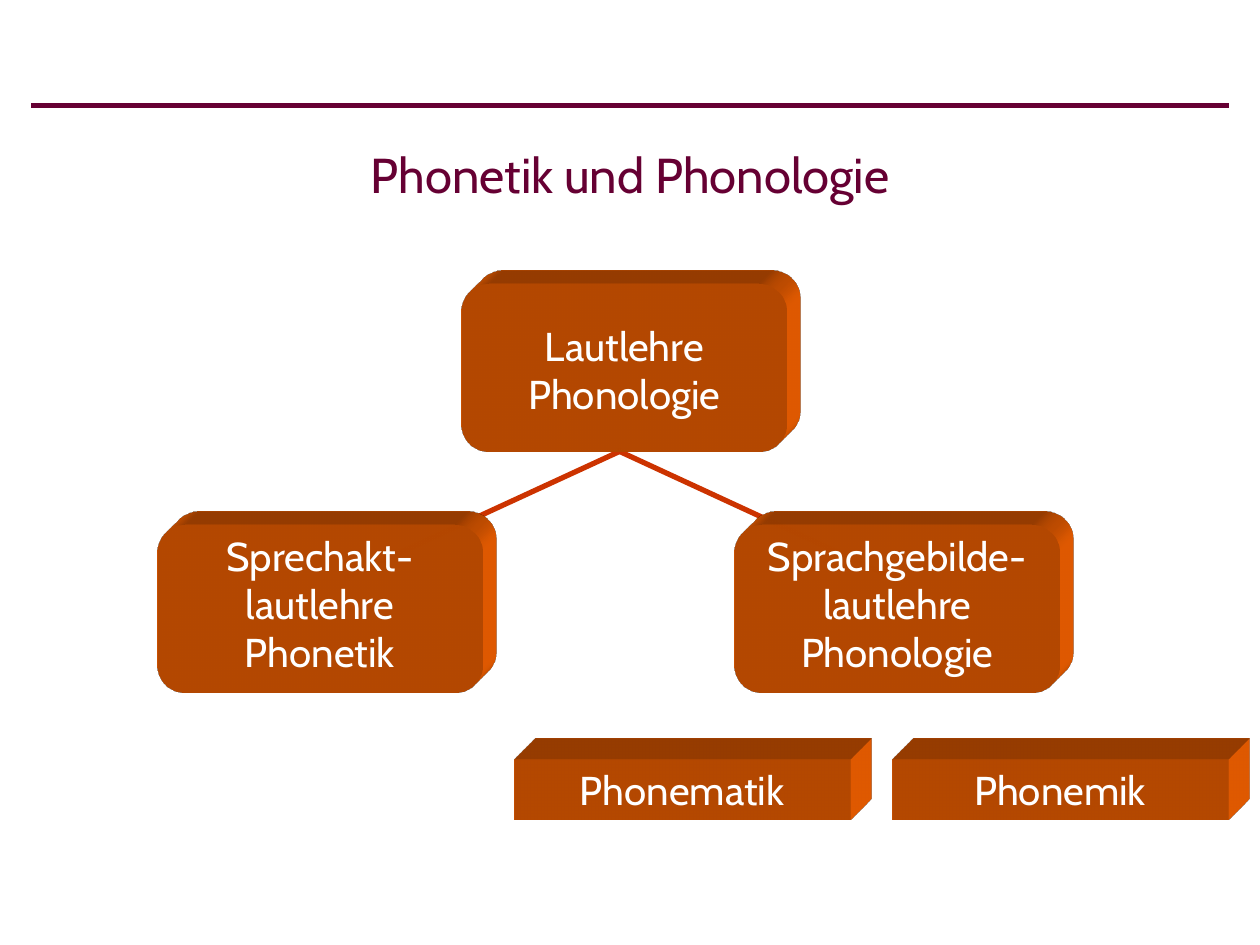
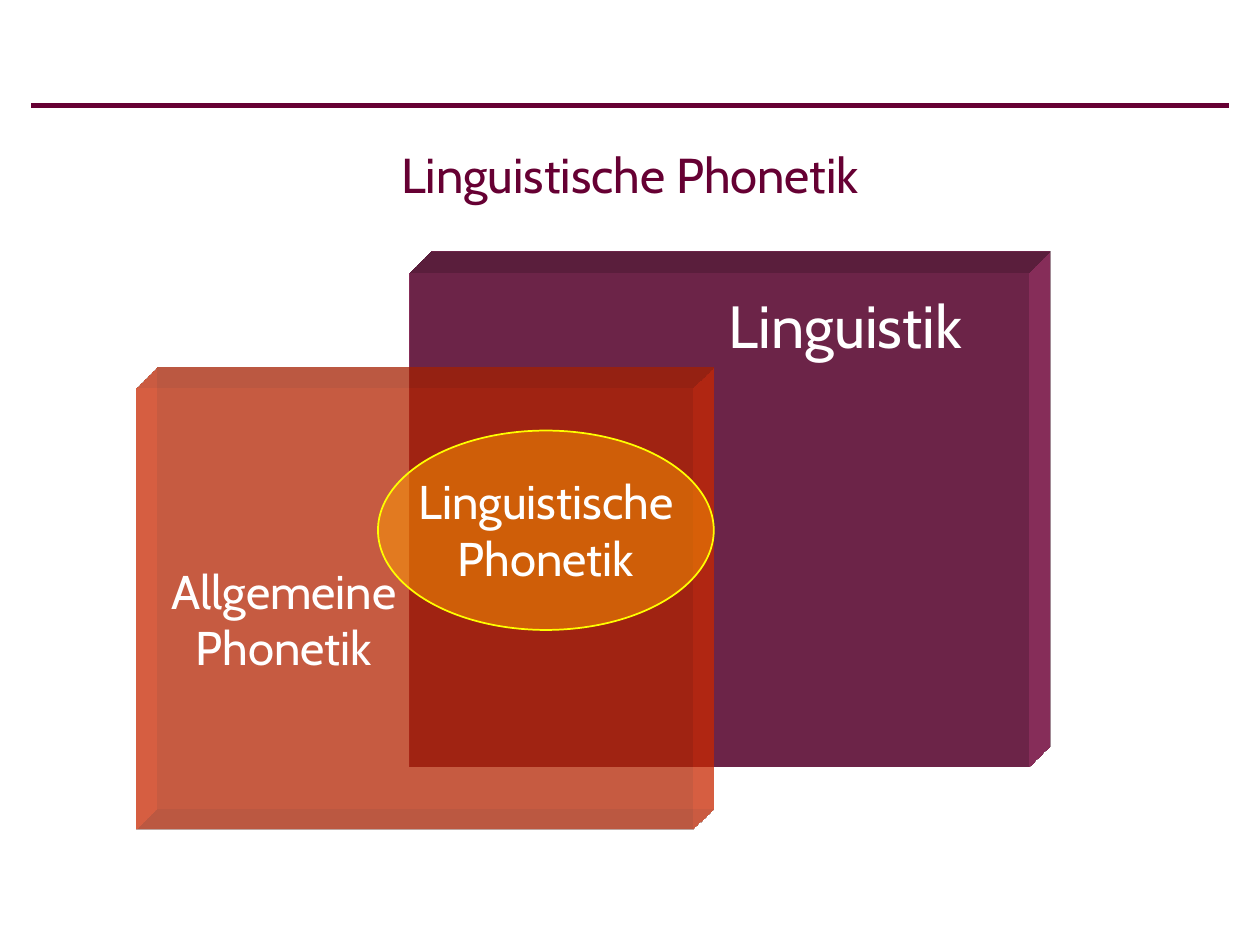
from lxml import etree
from pptx import Presentation
from pptx.dml.color import RGBColor
from pptx.enum.shapes import MSO_CONNECTOR, MSO_SHAPE
from pptx.enum.text import MSO_ANCHOR, PP_ALIGN
from pptx.oxml.ns import qn
from pptx.util import Cm, Pt

STRAIGHT = MSO_CONNECTOR.STRAIGHT
ROUNDED, RECTANGLE, OVAL = MSO_SHAPE.ROUNDED_RECTANGLE, MSO_SHAPE.RECTANGLE, MSO_SHAPE.OVAL
TOP, MIDDLE = MSO_ANCHOR.TOP, MSO_ANCHOR.MIDDLE
CENTER = PP_ALIGN.CENTER

FONT = "Cabin"
COLORS = {
    "title": "660033",
    "branch": "CC3300",
    "text": "FFFFFF",
    "sound": "FF6600",
    "linguistics": "993366",
    "phonetics": "FF3300",
    "overlap": "FF9900",
    "overlap_edge": "FFFF00",
}

NODE_WIDTH, NODE_HEIGHT = 6.56, 3.39
NODE_DEPTH, BLOCK_DEPTH = 0.77, 1.2


def rgb(name):
    return RGBColor.from_string(COLORS[name])


def write_text(shape, text, size=23, color="text", anchor=TOP, inset=0.25):
    frame = shape.text_frame
    frame.word_wrap = True
    frame.vertical_anchor = anchor
    frame.margin_left = frame.margin_right = Cm(inset)
    frame.margin_top = frame.margin_bottom = Cm(inset / 2)
    paragraph = frame.paragraphs[0]
    paragraph.text = text.replace("\n", "\v")
    paragraph.alignment = CENTER
    paragraph.font.name = FONT
    paragraph.font.size = Pt(size)
    paragraph.font.color.rgb = rgb(color)


def add_label(slide, text, x, y, width, height, **text_format):
    label = slide.shapes.add_textbox(Cm(x), Cm(y), Cm(width), Cm(height))
    write_text(label, text, **text_format)


def add_line(slide, start, end, color):
    line = slide.shapes.add_connector(STRAIGHT, *(Cm(v) for v in (*start, *end)))
    line.line.color.rgb = rgb(color)
    line.line.width = Pt(3)
    line.line._get_or_add_ln().set("cap", "sq")
    etree.SubElement(line._element.spPr, qn("a:effectLst"))


def add_shape(slide, kind, x, y, width, height, fill, alpha=100, edge=None):
    shape = slide.shapes.add_shape(kind, Cm(x), Cm(y), Cm(width), Cm(height))
    shape.shadow.inherit = False
    shape.fill.solid()
    shape.fill.fore_color.rgb = rgb(fill)
    if alpha < 100:
        color = next(shape._element.spPr.iter(qn("a:srgbClr")))
        etree.SubElement(color, qn("a:alpha")).set("val", str(alpha * 1000))
    if edge:
        shape.line.color.rgb = rgb(edge)
        shape.line.width = Pt(1)
    else:
        shape.line.fill.background()
    return shape


def extrude(shape, depth, color):
    """Give the shape a solid body that recedes to the upper right."""
    properties = shape._element.spPr
    scene = etree.SubElement(properties, qn("a:scene3d"))
    etree.SubElement(scene, qn("a:camera"), prst="legacyObliqueTopRight")
    etree.SubElement(scene, qn("a:lightRig"), rig="legacyFlat3", dir="b")
    body = etree.SubElement(properties, qn("a:sp3d"), extrusionH=str(Cm(depth)),
                            prstMaterial="legacyMatte")
    for bevel in ("a:bevelT", "a:bevelB"):
        etree.SubElement(body, qn(bevel), w="13500", h="13500", prst="angle")
    side = etree.SubElement(body, qn("a:extrusionClr"))
    etree.SubElement(side, qn("a:srgbClr"), val=COLORS[color])


def add_block(slide, kind, x, y, width, height, fill, depth=BLOCK_DEPTH, alpha=100):
    block = add_shape(slide, kind, x, y, width, height, fill, alpha)
    extrude(block, depth, fill)
    return block


def add_node(slide, text, x, y, text_drop=0):
    add_block(slide, ROUNDED, x, y, NODE_WIDTH, NODE_HEIGHT, "sound", NODE_DEPTH)
    add_label(slide, text, x, y + text_drop, NODE_WIDTH, NODE_HEIGHT - text_drop)


def start_slide(deck, title):
    slide = deck.slides.add_slide(deck.slide_layouts[6])
    add_line(slide, (0.68, 2.13), (24.72, 2.13), "title")
    add_label(slide, title, 0.7, 2.13, 24, 2.74, size=28, color="title", anchor=MIDDLE)
    return slide


def build_sound_study_tree(deck):
    slide = start_slide(deck, "Phonetik und Phonologie")
    for branch_x in (6.98, 17.99):
        add_line(slide, (12.49, 9.1), (branch_x, 11.64), "branch")
    add_node(slide, "Lautlehre\nPhonologie", 9.31, 5.72, text_drop=0.63)
    add_node(slide, "Sprechakt-\nlautlehre\nPhonetik", 3.17, 10.58)
    add_node(slide, "Sprachgebilde-\nlautlehre\nPhonologie", 14.81, 10.58)
    # Alternative terms
    for term, x in (("Phonematik", 10.37), ("Phonemik", 17.99)):
        bar = add_block(slide, RECTANGLE, x, 15.31, 6.77, 1.22, "sound")
        write_text(bar, term)


def build_overlap(deck):
    slide = start_slide(deck, "Linguistische Phonetik")
    # Two fields
    add_block(slide, RECTANGLE, 8.26, 5.5, 12.49, 9.95, "linguistics")
    add_label(slide, "Linguistik", 13.76, 5.71, 6.56, 1.68, size=34)
    add_block(slide, RECTANGLE, 2.75, 7.84, 11.22, 8.89, "phonetics", alpha=50)
    add_label(slide, "Allgemeine\nPhonetik", 2.55, 11.2, 6.35, 2.5, size=27)
    # Shared field
    add_shape(slide, OVAL, 7.62, 8.68, 6.77, 4.02, "overlap", 50, "overlap_edge")
    add_label(slide, "Linguistische\nPhonetik", 8.25, 9.53, 5.51, 2.29, size=27, inset=0)


def main():
    deck = Presentation()
    deck.slide_width, deck.slide_height = Cm(25.4), Cm(19.05)
    build_sound_study_tree(deck)
    build_overlap(deck)
    deck.save("out.pptx")


if __name__ == "__main__":
    main()
